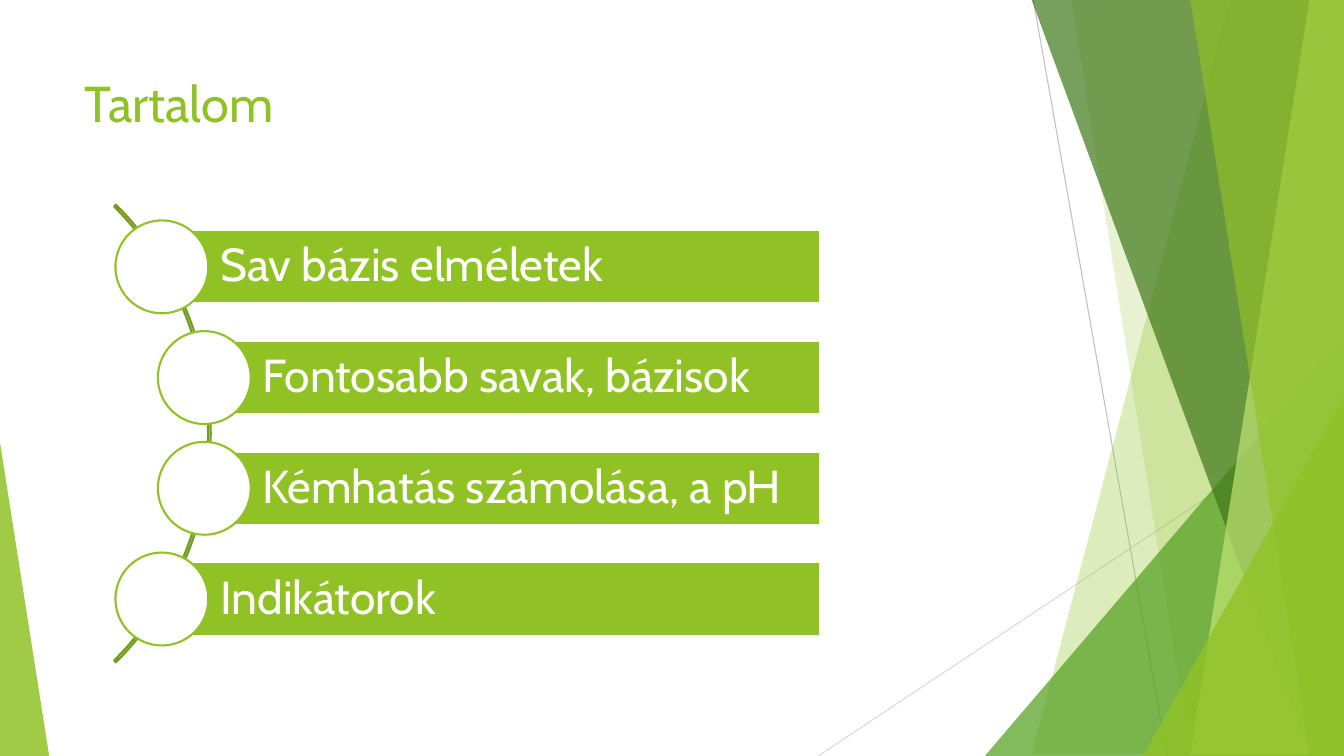
from dataclasses import dataclass

from lxml.etree import SubElement
from pptx import Presentation
from pptx.dml.color import RGBColor as RGB
from pptx.enum.shapes import MSO_CONNECTOR as CONN, MSO_SHAPE as SHAPE
from pptx.enum.text import MSO_ANCHOR as ANCHOR, MSO_AUTO_SIZE as FIT, PP_ALIGN as ALIGN
from pptx.oxml.ns import qn
from pptx.util import Cm, Pt

WIDTH, HEIGHT = 33.87, 19.05


@dataclass(frozen=True)
class Theme:
    font: str = "Cabin"
    title_size: int = 36
    item_size: int = 33
    outline: float = 1.5
    hairline: float = 0.75
    white: str = "FFFFFF"
    lime: str = "90C226"
    pale_lime: str = "C0E474"
    green: str = "54A021"
    forest: str = "3F7819"
    olive: str = "739B1E"
    steep_gray: str = "BFBFBF"
    flat_gray: str = "D9D9D9"


class SlideBuilder:
    def __init__(self, prs, theme):
        self.theme = theme
        self.slide = prs.slides.add_slide(prs.slide_layouts[5])
        self.shapes = self.slide.shapes

    def paint(self, sp, fill=None, line=None, opacity=100):
        sp.shadow.inherit = False
        if fill:
            sp.fill.solid()
            sp.fill.fore_color.rgb = RGB.from_string(fill)
            if opacity < 100:
                color = next(sp.element.spPr.iter(qn("a:srgbClr")))
                SubElement(color, qn("a:alpha"), val=str(opacity * 1000))
        else:
            sp.fill.background()
        if line:
            sp.line.color.rgb = RGB.from_string(line)
            sp.line.width = Pt(self.theme.outline)
        else:
            sp.line.fill.background()
        return sp

    def shape(self, kind, box, adjust=(), **style):
        sp = self.shapes.add_shape(kind, *map(Cm, box))
        for i, value in enumerate(adjust):
            sp.adjustments[i] = value
        return self.paint(sp, **style)

    def facet(self, top_x, bottom_x, fill, opacity):
        fb = self.shapes.build_freeform(top_x, 0, scale=Cm(1))
        fb.add_line_segments([(WIDTH, 0), (WIDTH, HEIGHT), (bottom_x, HEIGHT)])
        self.paint(fb.convert_to_shape(), fill=fill, opacity=opacity)

    def corner(self, x, y, width, apex, fill, opacity):
        self.shape(SHAPE.ISOSCELES_TRIANGLE, (x, y, width, HEIGHT - y), [apex],
                   fill=fill, opacity=opacity)

    def line(self, points, color):
        ln = self.shapes.add_connector(CONN.STRAIGHT, *map(Cm, points))
        ln.line.color.rgb = RGB.from_string(color)
        ln.line.width = Pt(self.theme.hairline)
        SubElement(ln.element.spPr, qn("a:effectLst"))

    def label(self, tf, text, size, color, anchor):
        tf.text = text
        tf.word_wrap = True
        tf.auto_size = FIT.NONE
        tf.vertical_anchor = anchor
        p = tf.paragraphs[0]
        p.alignment = ALIGN.LEFT
        font = p.runs[0].font
        font.name = self.theme.font
        font.size = Pt(size)
        font.color.rgb = RGB.from_string(color)
        return p

    def title(self, text, box):
        sp = self.shapes.title
        sp.left, sp.top, sp.width, sp.height = map(Cm, box)
        self.label(sp.text_frame, text, self.theme.title_size, self.theme.lime, ANCHOR.TOP)
        sp.element.getparent().append(sp.element)

    def item(self, text, x, y, right, height, diameter):
        th = self.theme
        bar = self.shape(SHAPE.RECTANGLE, (x, y, right - x, height),
                         fill=th.lime, line=th.white)
        tf = bar.text_frame
        tf.margin_left = Cm(1.47)
        tf.margin_right = tf.margin_top = tf.margin_bottom = Cm(0.23)
        p = self.label(tf, text, th.item_size, th.white, ANCHOR.MIDDLE)
        p.line_spacing = 0.9
        circle = (x - diameter / 2, y + (height - diameter) / 2, diameter, diameter)
        self.shape(SHAPE.OVAL, circle, fill=th.white, line=th.lime)


def draw_background(b):
    th = b.theme
    b.line((26.04, 0, 29.41, HEIGHT), th.steep_gray)
    b.line((WIDTH, 10.24, 20.62, HEIGHT), th.flat_gray)
    b.facet(31.19, 25.5, th.lime, 30)
    b.facet(26.67, 30.05, th.lime, 20)
    b.corner(24.82, 8.46, 9.05, 1, th.green, 72)
    b.facet(25.93, 32.79, th.forest, 70)
    b.facet(33.1, 30.28, th.pale_lime, 70)
    b.facet(30.38, 33.48, th.lime, 65)
    b.corner(28.8, 9.98, 5.07, 1, th.lime, 80)
    b.corner(0, 11.15, 1.24, 0, th.lime, 85)


def draw_contents(b):
    b.shape(SHAPE.BLOCK_ARC, (-11, 2.77, 16.31, 16.31), [189, 27, 0.004],
            line=b.theme.olive)
    outer, inner = 4.08, 5.15
    items = [
        ("Sav bázis elméletek", outer),
        ("Fontosabb savak, bázisok", inner),
        ("Kémhatás számolása, a pH", inner),
        ("Indikátorok", outer),
    ]
    for i, (text, x) in enumerate(items):
        b.item(text, x, 5.8 + 2.79 * i, right=20.68, height=1.85, diameter=2.34)


def main():
    prs = Presentation()
    prs.slide_width, prs.slide_height = Cm(WIDTH), Cm(HEIGHT)
    b = SlideBuilder(prs, Theme())
    draw_background(b)
    b.title("Tartalom", (1.88, 1.7, 23.88, 3.66))
    draw_contents(b)
    prs.save("out.pptx")


if __name__ == "__main__":
    main()
